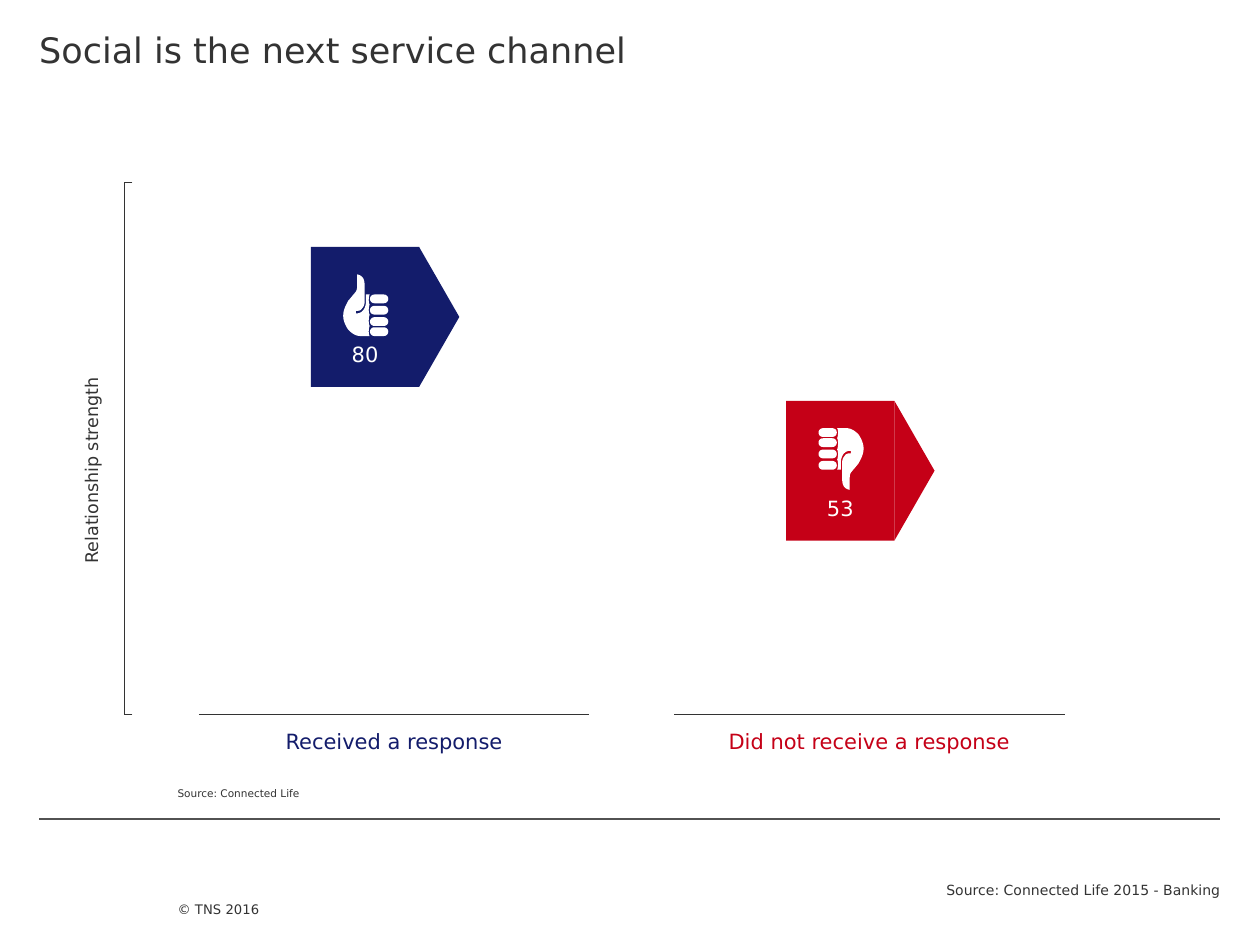
"""Build the slide on social media as a service channel."""
import pptx
import pptx.util
import pptx.dml.color
import pptx.enum.shapes
import pptx.enum.text
import pptx.oxml.ns
import lxml.etree

Cm, Pt = pptx.util.Cm, pptx.util.Pt
RGBColor = pptx.dml.color.RGBColor
ALIGN = pptx.enum.text.PP_ALIGN
ANCHOR = pptx.enum.text.MSO_ANCHOR
RECT = pptx.enum.shapes.MSO_SHAPE.RECTANGLE
STRAIGHT = pptx.enum.shapes.MSO_CONNECTOR.STRAIGHT

FONT = "DejaVu Sans"
INK = RGBColor(0x33, 0x33, 0x33)
GREY = RGBColor(0x52, 0x52, 0x52)
BLUE = RGBColor(0x13, 0x1C, 0x6B)
RED = RGBColor(0xC5, 0x00, 0x17)
WHITE = RGBColor(0xFF, 0xFF, 0xFF)

TITLE = "Social is the next service channel"
AXIS = "Relationship strength"
RIGHTS = "© TNS 2016"
NOTE = "Source: Connected Life"
SOURCE = "Source: Connected Life 2015 - Banking"

# label, value, colour, tag top, value height, label width, thumb turn
GROUPS = [
    ("Received a response", "80", BLUE, 4.98, 0.81, 7.72, 0),
    ("Did not receive a response", "53", RED, 8.08, 0.51, 7.01, 180),
]

LEFT, STEP, WIDTH = 4.01, 9.58, 7.87
TOP, BASE = 3.68, 14.4
SPINE, TICK = 2.51, 2.67
TAG_W, TAG_H, TIP_W = 2.18, 2.82, 0.81

PALM = [
    (18, 16), (18, 22), (18, 27, 15, 31, 11, 31), (10, 31), (10, 29),
    (12, 29, 14, 29, 15, 27), (16, 26, 17, 24, 17, 22), (17, 9),
    (17, 3, 15, 1, 11, 0), (11, 9), (11, 11, 11, 13, 9, 15), (4, 21),
    (2, 25, 0, 28, 0, 33), (0, 37, 2, 41, 4, 44), (7, 47, 10, 49, 14, 49),
    (21, 49), (20, 48, 20, 43, 21, 41), (20, 40, 20, 34, 21, 32),
    (20, 31, 20, 26, 21, 24), (20, 23, 20, 18, 21, 16),
]
FINGERS = [
    [(25, y), (32, y), (37, y, 37, y + 7, 32, y + 7), (25, y + 7),
     (20, y + 7, 20, y, 25, y)]
    for y in (16, 25, 34, 42)
]


def trace(steps, count=10):
    """Turn lines and cubic curves into points."""
    dots = []
    for step in steps:
        if len(step) == 2:
            dots.append(step)
            continue
        knots = [dots[-1], step[:2], step[2:4], step[4:]]
        for i in range(1, count + 1):
            t = i / count
            mix = ((1 - t) ** 3, 3 * t * (1 - t) ** 2, 3 * t * t * (1 - t), t ** 3)
            dots.append(tuple(sum(m * k[a] for m, k in zip(mix, knots)) for a in (0, 1)))
    return [(x * 100, y * 100) for x, y in dots]


def paint(shape, fill):
    """Give a shape a flat fill."""
    shape.shadow.inherit = False
    shape.fill.solid()
    shape.fill.fore_color.rgb = fill
    shape.line.fill.background()
    return shape


def outline(shapes, paths, x, y, scale, fill):
    """Draw closed paths as one freeform."""
    pen = shapes.build_freeform(*paths[0][0], scale=scale)
    for i, dots in enumerate(paths):
        if i:
            pen.move_to(*dots[0])
        pen.add_line_segments(dots[1:], close=True)
    return paint(pen.convert_to_shape(Cm(x), Cm(y)), fill)


def write(shape, text, size, ink=INK, align=ALIGN.LEFT, anchor=ANCHOR.TOP,
          above=0, below=0, wrap=True):
    """Set and format the text of a shape."""
    frame = shape.text_frame
    frame.text = text
    frame.word_wrap = wrap
    frame.vertical_anchor = anchor
    frame.margin_left = frame.margin_right = 0
    frame.margin_top, frame.margin_bottom = Cm(above), Cm(below)
    para = frame.paragraphs[0]
    para.alignment = align
    font = para.runs[0].font
    font.name, font.size, font.color.rgb = FONT, Pt(size), ink
    return shape


def label(shapes, place, text, size, **style):
    """Add a text box."""
    return write(shapes.add_textbox(*map(Cm, place)), text, size, **style)


def rule(shapes, ends, ink=INK, weight=0.5):
    """Add a straight line."""
    line = shapes.add_connector(STRAIGHT, *map(Cm, ends))
    line.line.color.rgb = ink
    line.line.width = Pt(weight)
    lxml.etree.SubElement(line._element.spPr, pptx.oxml.ns.qn("a:effectLst"))


def group(shapes, x, name, value, fill, top, high, wide, turn):
    """Draw one column with its tag, thumb and label."""
    rule(shapes, (x, BASE, x + WIDTH, BASE))
    label(shapes, (x + (WIDTH - wide) / 2, 14.68, wide, 0.51), name, 12,
          ink=fill, align=ALIGN.CENTER)
    left = x + 2.26
    paint(shapes.add_shape(RECT, Cm(left), Cm(top), Cm(TAG_W), Cm(TAG_H)), fill)
    tip = [(0, 0), (Cm(TIP_W), Cm(TAG_H / 2)), (0, Cm(TAG_H))]
    outline(shapes, [tip], left + TAG_W, top, 1, fill)
    box = shapes.add_shape(RECT, Cm(left + 0.53), Cm(top + 2.16 - high / 2),
                           Cm(1.12), Cm(high))
    write(paint(box, fill), value, 12, WHITE, ALIGN.CENTER, ANCHOR.MIDDLE)
    hand = [trace(steps) for steps in [PALM] + FINGERS]
    thumb = outline(shapes, hand, left + 0.65, top + 0.55, 91.44, WHITE)
    thumb.rotation = turn


def main():
    """Lay out the slide and save it."""
    deck = pptx.Presentation()
    deck.slide_width, deck.slide_height = Cm(25.4), Cm(19.05)
    shapes = deck.slides.add_slide(deck.slide_layouts[6]).shapes

    rule(shapes, (0.79, 16.51, 24.59, 16.51), GREY, 0.75)
    label(shapes, (3.58, 17.58, 7.06, 1.47), RIGHTS, 7.5,
          anchor=ANCHOR.BOTTOM, below=0.79)
    label(shapes, (0.79, 0, 23.8, 2.87), TITLE, 20, above=0.58)
    label(shapes, (13.51, 17.12, 11.1, 0.99), SOURCE, 8,
          align=ALIGN.RIGHT, anchor=ANCHOR.BOTTOM)

    rule(shapes, (SPINE, TOP, SPINE, BASE))
    for y in (TOP, BASE):
        rule(shapes, (TICK, y, SPINE, y))
    for i, row in enumerate(GROUPS):
        group(shapes, LEFT + i * STEP, *row)

    axis = label(shapes, (-0.08, 9.27, 3.84, 0.43), AXIS, 10,
                 align=ALIGN.CENTER, wrap=False)
    axis.rotation = 270
    label(shapes, (3.58, 15.49, 21.03, 1.02), NOTE, 6, anchor=ANCHOR.MIDDLE)
    deck.save("out.pptx")


if __name__ == "__main__":
    main()
